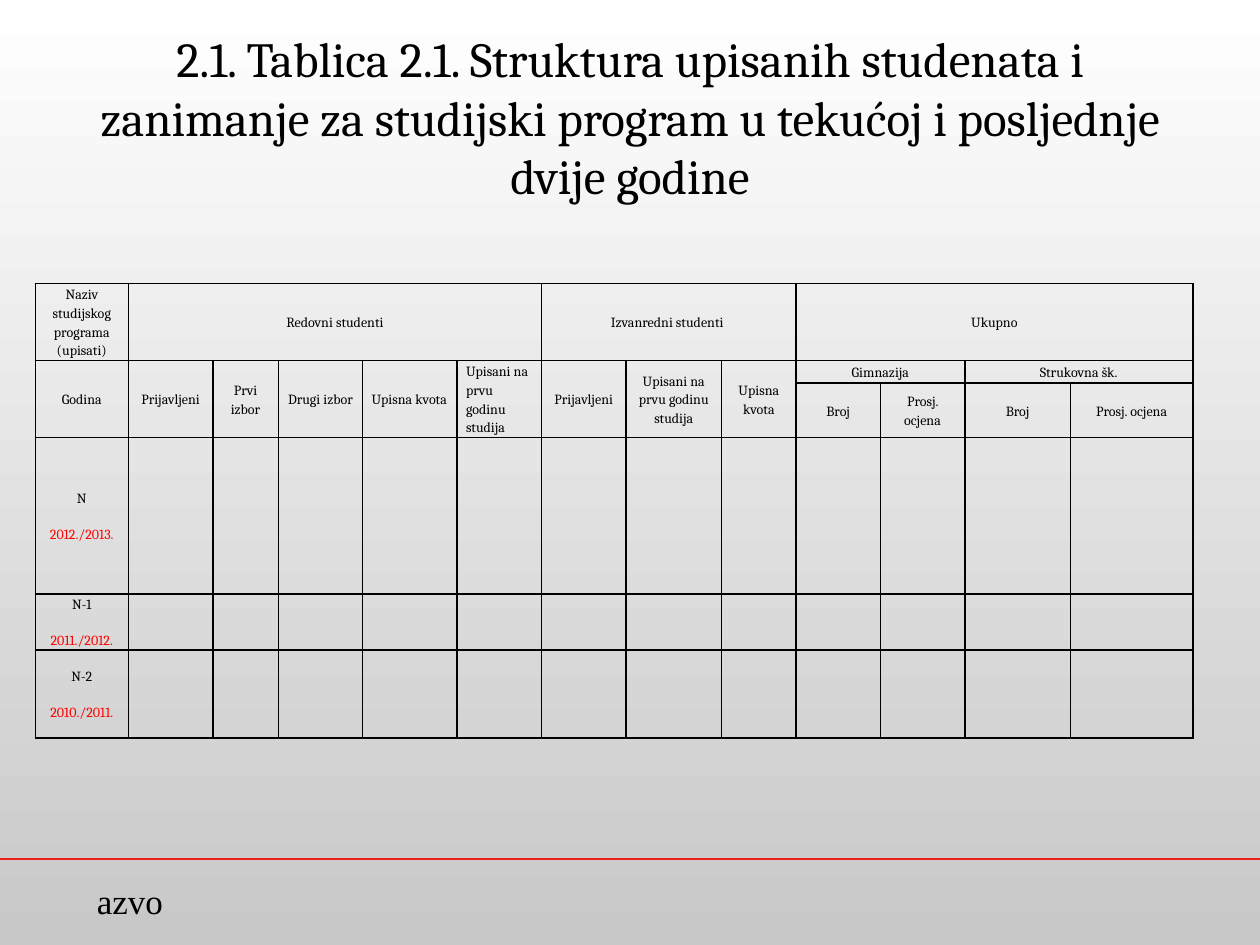
from pptx import Presentation
from pptx.dml.color import RGBColor
from pptx.enum.shapes import MSO_CONNECTOR
from pptx.enum.text import MSO_ANCHOR, MSO_AUTO_SIZE, PP_ALIGN
from pptx.oxml import parse_xml
from pptx.oxml.ns import nsdecls
from pptx.util import Inches, Pt
from lxml.etree import SubElement
from pptx.oxml.ns import qn

BLACK = RGBColor(0, 0, 0)
WHITE = RGBColor(0xFF, 0xFF, 0xFF)
GREY = RGBColor(0xC8, 0xC8, 0xC8)
RED = RGBColor(0xFF, 0, 0)
RULE = RGBColor(0xEE, 0x1C, 0x1B)

COLS = [0.74, 0.67, 0.52, 0.67, 0.75, 0.67, 0.67, 0.76, 0.59, 0.67, 0.67, 0.84, 0.97]
ROWS = [0.21, 0.18, 0.38, 1.24, 0.4, 0.7]

# Header cells: (row, column, row span, column span, text)
GROUPS = [
    (0, 0, 1, 1, "Naziv studijskog programa (upisati)"),
    (0, 1, 1, 5, "Redovni studenti"),
    (0, 6, 1, 3, "Izvanredni studenti "),
    (0, 9, 1, 4, "Ukupno"),
    (1, 9, 1, 2, "Gimnazija"),
    (1, 11, 1, 2, "Strukovna šk."),
]
HEADS = ["Godina", "Prijavljeni", "Prvi izbor", "Drugi izbor", "Upisna kvota",
         "Upisani na prvu godinu studija", "Prijavljeni",
         "Upisani na prvu godinu studija", "Upisna kvota"]
LEFT = (4, 5)  # head columns aligned left
MARKS = ["Broj", "Prosj. ocjena"] * 2
YEARS = [("N", "2012./2013."), ("N-1", "2011./2012."), ("N-2", "2010./2011.")]


def style(item, values):
    for name, value in values.items():
        setattr(item, name, value)


def add_run(para, text, size, face, color=BLACK):
    run = para.add_run()
    run.text = text
    style(run.font, {"size": Pt(size), "name": face, "bold": False})
    run.font.color.rgb = color


def set_back(slide):
    fill = slide.background.fill
    fill.gradient()
    fill.gradient_angle = 270
    for stop, color in zip(fill.gradient_stops, (WHITE, GREY)):
        stop.color.rgb = color


def add_title(slide, text):
    title = slide.shapes.title
    style(title, {"left": Inches(0.5), "top": Inches(0.3),
                  "width": Inches(9), "height": Inches(1.25)})
    frame = title.text_frame
    style(frame, {"word_wrap": True, "auto_size": MSO_AUTO_SIZE.NONE,
                  "vertical_anchor": MSO_ANCHOR.MIDDLE})
    para = frame.paragraphs[0]
    para.alignment = PP_ALIGN.CENTER
    add_run(para, text, 28, "Cambria")


def add_footer(slide):
    y = Inches(6.82)
    line = slide.shapes.add_connector(MSO_CONNECTOR.STRAIGHT, 0, y, Inches(10), y)
    line.line.color.rgb = RULE
    line.line.width = Pt(1)
    SubElement(line._element.spPr, qn("a:effectLst"))
    box = slide.shapes.add_textbox(Inches(0.67), Inches(6.93), Inches(0.87), Inches(0.43))
    box.text_frame.word_wrap = True
    add_run(box.text_frame.paragraphs[0], "azvo", 20, "Times New Roman")


def set_cell(cell):
    style(cell, {"margin_left": Inches(0.07), "margin_right": Inches(0.07),
                 "margin_top": 0, "margin_bottom": 0,
                 "vertical_anchor": MSO_ANCHOR.MIDDLE})
    props = cell._tc.get_or_add_tcPr()
    for side in "LRTB":
        props.append(parse_xml(
            f'<a:ln{side} {nsdecls("a")} w="12700"><a:solidFill>'
            f'<a:srgbClr val="{BLACK}"/></a:solidFill></a:ln{side}>'))
    cell.fill.background()


def write(cell, lines, align=PP_ALIGN.CENTER):
    frame = cell.text_frame
    for i, (text, color) in enumerate(lines):
        para = frame.add_paragraph() if i else frame.paragraphs[0]
        style(para, {"alignment": align, "line_spacing": 1.15, "space_after": Pt(10)})
        add_run(para, text, 8, "Cambria", color)


def add_grid(slide):
    height = Inches(3.81)
    shape = slide.shapes.add_table(len(ROWS), len(COLS), Inches(0.28), Inches(2.25),
                                   Inches(sum(COLS)), height)
    table = shape.table
    style(table, {"first_row": False, "horz_banding": False})
    for col, width in zip(table.columns, COLS):
        col.width = Inches(width)
    for row, tall in zip(table.rows, ROWS):
        row.height = Inches(tall)
    shape.height = height
    for cell in table.iter_cells():
        set_cell(cell)

    # Header rows
    heads = [(1, c, 2, 1, text) for c, text in enumerate(HEADS)]
    marks = [(2, c, 1, 1, text) for c, text in enumerate(MARKS, len(HEADS))]
    for r, c, down, across, text in GROUPS + heads + marks:
        cell = table.cell(r, c)
        if down * across > 1:
            cell.merge(table.cell(r + down - 1, c + across - 1))
        left = r == 1 and c in LEFT
        write(cell, [(text, BLACK)], PP_ALIGN.LEFT if left else PP_ALIGN.CENTER)

    # Year rows
    for r, (label, year) in enumerate(YEARS, 3):
        write(table.cell(r, 0), [(label, BLACK), (year, RED)])


def main():
    deck = Presentation()
    style(deck, {"slide_width": Inches(10), "slide_height": Inches(7.5)})
    slide = deck.slides.add_slide(deck.slide_layouts[5])
    set_back(slide)
    add_footer(slide)
    add_title(slide, "2.1. Tablica 2.1. Struktura upisanih studenata i zanimanje "
                     "za studijski program u tekućoj i posljednje dvije godine")
    add_grid(slide)
    deck.save("out.pptx")


if __name__ == "__main__":
    main()
